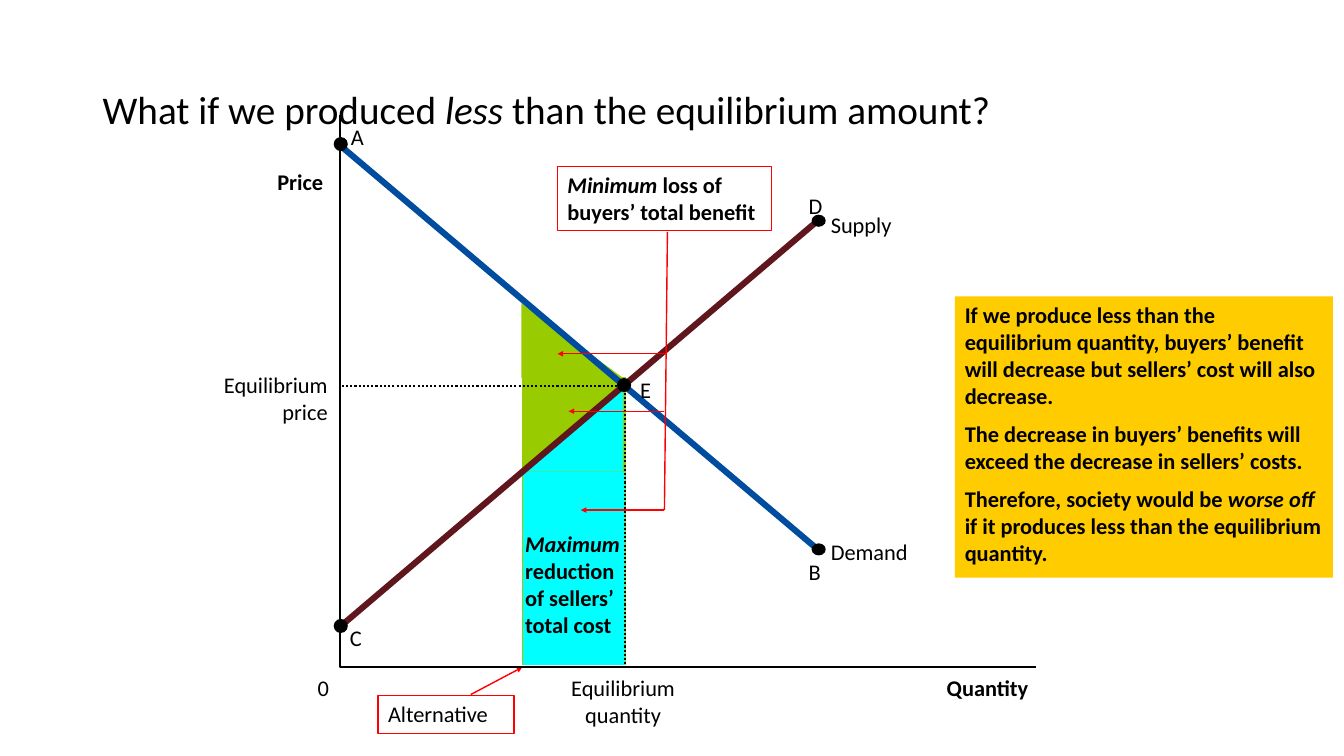
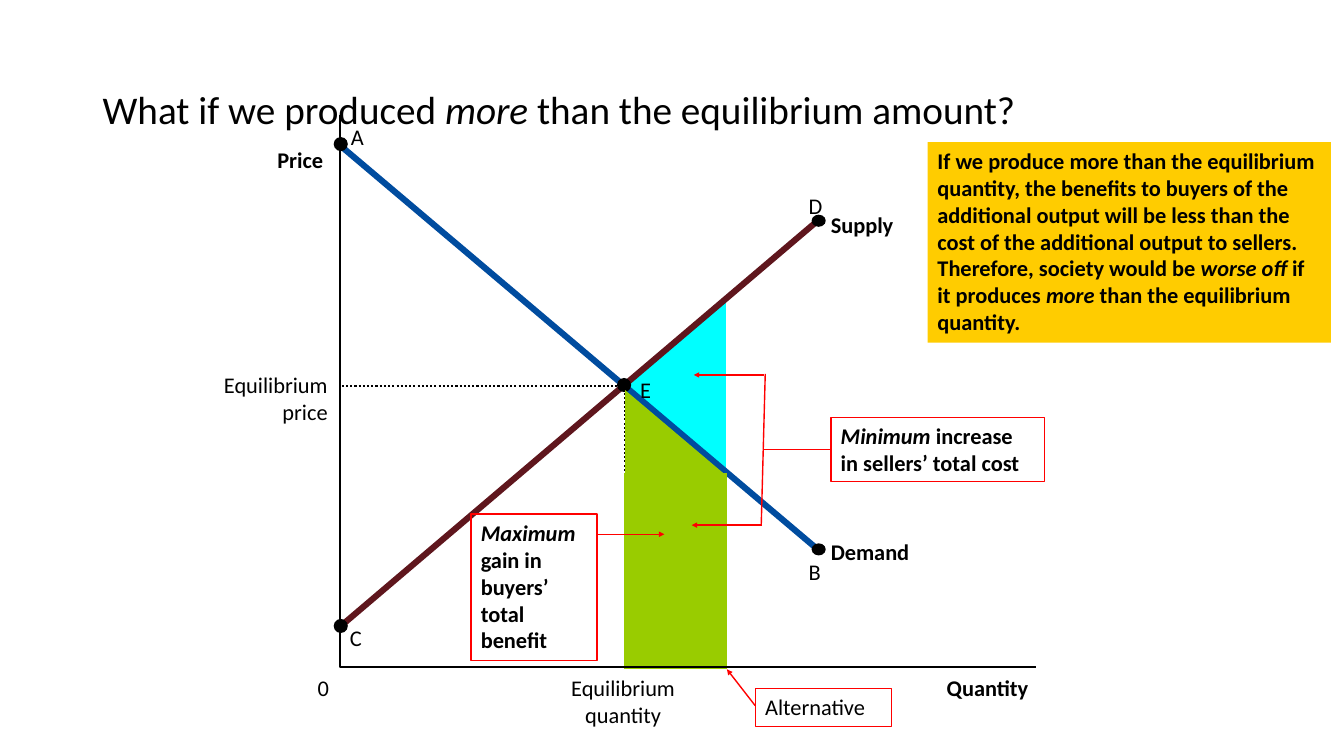
import pptx
import pptx.util
import pptx.dml.color
import pptx.enum.dml
import pptx.enum.shapes
import pptx.enum.text
import pptx.oxml.ns
from lxml import etree

Inches, Pt = pptx.util.Inches, pptx.util.Pt
Align = pptx.enum.text.PP_ALIGN
Preset = pptx.enum.shapes.MSO_SHAPE

FONT = "Calibri"
COLOURS = {
    "black": "000000", "green": "99CC00", "cyan": "00FFFF", "red": "FF0000",
    "supply": "5F161D", "demand": "004C9F", "note": "FFCC00",
}

# Shared diagram, in inches
TITLE_BOX = (0.92, 0.4, 11.5, 1.45)
AXES = [(3.37, 1.14), (3.37, 6.62), (10.28, 6.62)]
GUIDES = [(3.39, 3.83), (6.2, 3.83), (6.2, 6.62)]
LABEL_HEIGHT = 0.27
CURVE_LABEL_LEFT, CURVE_LABEL_WIDTH = 8.24, 0.9
LETTER_WIDTH = 0.2
AXIS_LABELS = [  # lines, left, top, width, alignment, bold
    (["0"], 3.15, 6.69, 0.15, Align.LEFT, False),
    (["Quantity"], 9.39, 6.69, 0.9, Align.LEFT, True),
    (["Equilibrium", "price"], 2.15, 3.68, 1.1, Align.RIGHT, False),
    (["Equilibrium", "quantity"], 5.63, 6.69, 1.1, Align.CENTER, False),
]
CURVES = [  # name, start, end, label top, colour
    ("Supply", (3.37, 6.22), (8.11, 2.19), 2.09, "supply"),
    ("Demand", (3.37, 1.44), (8.11, 5.45), 5.34, "demand"),
]
POINTS = [  # letter, letter position, dot position, dot height
    ("A", (3.48, 1.22), (3.31, 1.36), 0.14),
    ("C", (3.47, 6.19), (3.31, 6.14), 0.14),
    ("B", (8.02, 5.54), (8.05, 5.39), 0.12),
    ("D", (8.02, 1.91), (8.05, 2.13), 0.12),
    ("E", (6.35, 3.73), (6.12, 3.75), 0.14),
]

# Each text is a list of paragraphs, each paragraph a list of (words, italic)
ALTERNATIVE = [[("Alternative", False)]]
SLIDES = [
    {
        "title": [("What if we produced ", False), ("less", True),
                  (" than the equilibrium amount?", False)],
        "price_top": 1.67,
        "bold_curves": False,
        "areas_behind": [
            ("green", [(5.17, 3.01), (5.17, 3.75), (6.18, 3.75)]),
            ("green", [(5.18, 3.74), (6.21, 3.74), (6.21, 6.6), (5.18, 6.6)]),
            ("cyan", [(5.22, 4.68), (6.18, 4.68), (6.18, 3.86)]),
            ("cyan", [(5.19, 4.68), (6.2, 4.68), (6.2, 6.6), (5.19, 6.6)]),
        ],
        "areas_front": [],
        "boxes": [  # text, position and size, fill, line, bold
            ([[("Maximum ", True), ("reduction of sellers’ total cost", False)]],
             (5.11, 5.21, 1.18, 1.18), None, None, True),
            ([[("Minimum ", True), ("loss of buyers’ total benefit", False)]],
             (5.53, 1.65, 2.12, 0.64), None, "red", True),
            (ALTERNATIVE, (3.75, 6.9, 1.35, 0.38), None, "red", False),
            ([[("If we produce less than the equilibrium quantity, buyers’ benefit "
                "will decrease but sellers’ cost will also decrease.", False)],
              [("The decrease in buyers’ benefits will exceed the decrease in "
                "sellers’ costs.", False)],
              [("Therefore, society would be ", False), ("worse off", True),
               (" if it produces less than the equilibrium quantity.", False)]],
             (9.47, 2.94, 3.75, 2.79), "note", None, True),
        ],
        "stems": [((6.62, 2.3), (6.59, 5.06))],
        "arrows": [
            ((6.61, 3.51), (5.53, 3.51)),
            ((6.59, 4.08), (5.64, 4.08)),
            ((6.59, 5.06), (5.76, 5.06)),
            ((4.67, 6.89), (5.18, 6.62)),
        ],
    },
    {
        "title": [("What if we produced ", False), ("more ", True),
                  ("than the equilibrium amount?", False)],
        "price_top": 1.45,
        "bold_curves": True,
        "areas_behind": [
            ("cyan", [(6.19, 3.84), (7.2, 3.84), (7.2, 2.97)]),
            ("cyan", [(6.22, 3.84), (7.2, 3.84), (7.2, 6.61), (6.22, 6.61)]),
        ],
        "areas_front": [
            ("green", [(6.19, 4.69), (7.21, 4.69), (7.21, 6.64), (6.19, 6.64)]),
            ("green", [(7.17, 4.69), (6.2, 4.69), (6.2, 3.87)]),
        ],
        "boxes": [
            (ALTERNATIVE, (7.49, 6.83, 1.35, 0.38), None, "red", False),
            ([[("Maximum ", True), ("gain in buyers’ total benefit", False)]],
             (4.67, 5.1, 1.25, 1.45), None, "red", True),
            ([[("If we produce more than the equilibrium quantity, the benefits to "
                "buyers of the additional output will be less than the cost of the "
                "additional output to sellers. Therefore, society would be ", False),
               ("worse off", True), (" if it produces ", False), ("more", True),
               (" than the equilibrium quantity.", False)]],
             (9.2, 1.41, 4, 1.99), "note", None, True),
            ([[("Minimum ", True), ("increase in sellers’ total cost", False)]],
             (8.24, 4.14, 2.12, 0.64), None, "red", True),
        ],
        "stems": [((8.24, 4.46), (7.57, 4.46)), ((7.59, 3.71), (7.55, 5.21))],
        "arrows": [
            ((7.49, 7), (7.21, 6.64)),
            ((5.92, 5.3), (6.59, 5.3)),
            ((7.56, 5.21), (6.86, 5.21)),
            ((7.58, 3.72), (6.88, 3.72)),
        ],
    },
]


def rgb(name):
    return pptx.dml.color.RGBColor.from_string(COLOURS[name])


def inches(values):
    return [Inches(value) for value in values]


def paint(shape, fill=None, line=None, width=1):
    shape.shadow.inherit = False
    if fill:
        shape.fill.solid()
        shape.fill.fore_color.rgb = rgb(fill)
    else:
        shape.fill.background()
    if line:
        shape.line.color.rgb = rgb(line)
        shape.line.width = Pt(width)
    else:
        shape.line.fill.background()


def write(shape, paragraphs, size=16, bold=False, align=Align.LEFT):
    frame = shape.text_frame
    for number, spans in enumerate(paragraphs):
        para = frame.add_paragraph() if number else frame.paragraphs[0]
        para.alignment = align
        for words, italic in spans:
            span = para.add_run()
            span.text = words
            span.font.name = FONT
            span.font.size = Pt(size)
            span.font.bold = bold
            span.font.italic = italic
            span.font.color.rgb = rgb("black")
    return frame


def add_title(page, spans):
    frame = write(page.shapes.add_textbox(*inches(TITLE_BOX)), [spans], size=28)
    frame.word_wrap = True
    frame.vertical_anchor = pptx.enum.text.MSO_ANCHOR.MIDDLE
    frame.paragraphs[0].line_spacing = 0.8


def add_label(page, lines, left, top, width, align=Align.LEFT, bold=False):
    height = LABEL_HEIGHT * len(lines)
    box = page.shapes.add_textbox(*inches((left, top, width, height)))
    frame = write(box, [[(line, False)] for line in lines], bold=bold, align=align)
    frame.word_wrap = True
    frame.margin_left = frame.margin_right = 0
    frame.margin_top = frame.margin_bottom = 0


def add_box(page, paragraphs, place, fill, line, bold):
    box = page.shapes.add_shape(Preset.RECTANGLE, *inches(place))
    paint(box, fill, line)
    frame = write(box, paragraphs, bold=bold)
    frame.word_wrap = True
    frame.vertical_anchor = pptx.enum.text.MSO_ANCHOR.TOP
    for para in frame.paragraphs[1:]:
        para.space_before = Pt(8)


def add_outline(page, points, close):
    start, *rest = [inches(point) for point in points]
    builder = page.shapes.build_freeform(*start)
    builder.add_line_segments(rest, close=close)
    return builder.convert_to_shape()


def add_areas(page, areas):
    for colour, corners in areas:
        paint(add_outline(page, corners, True), fill=colour)


def add_line(page, start, end, colour, width=1, arrow=False):
    line = page.shapes.add_connector(
        pptx.enum.shapes.MSO_CONNECTOR.STRAIGHT, *inches(start + end))
    line.line.color.rgb = rgb(colour)
    line.line.width = Pt(width)
    if arrow:
        etree.SubElement(line.line._get_or_add_ln(), pptx.oxml.ns.qn("a:tailEnd"),
                         type="triangle", w="sm", len="sm")
    etree.SubElement(line._element.spPr, pptx.oxml.ns.qn("a:effectLst"))


def add_diagram(page, price_top, bold_curves):
    add_label(page, ["Price"], 2.75, price_top, 0.55, bold=True)
    for label in AXIS_LABELS:
        add_label(page, *label)
    guides = add_outline(page, GUIDES, False)
    paint(guides, line="black", width=1.5)
    guides.line.dash_style = pptx.enum.dml.MSO_LINE.ROUND_DOT
    for name, start, end, label_top, colour in CURVES:
        add_line(page, start, end, colour, 4.38)
        add_label(page, [name], CURVE_LABEL_LEFT, label_top, CURVE_LABEL_WIDTH,
                  bold=bold_curves)
    for letter, letter_at, dot_at, dot_height in POINTS:
        dot = page.shapes.add_shape(
            Preset.OVAL, *inches(dot_at + (0.14, dot_height)))
        paint(dot, fill="black")
        add_label(page, [letter], *letter_at, LETTER_WIDTH)


def add_slide(deck, content):
    page = deck.slides.add_slide(deck.slide_layouts[6])
    add_areas(page, content["areas_behind"])
    add_title(page, content["title"])
    add_diagram(page, content["price_top"], content["bold_curves"])
    add_areas(page, content["areas_front"])
    for box in content["boxes"]:
        add_box(page, *box)
    for start, end in content["stems"]:
        add_line(page, start, end, "red")
    for start, end in content["arrows"]:
        add_line(page, start, end, "red", arrow=True)
    paint(add_outline(page, AXES, False), line="black", width=1.5)


def main():
    deck = pptx.Presentation()
    deck.slide_width, deck.slide_height = Inches(13.33), Inches(7.5)
    for content in SLIDES:
        add_slide(deck, content)
    deck.save("out.pptx")


if __name__ == "__main__":
    main()
